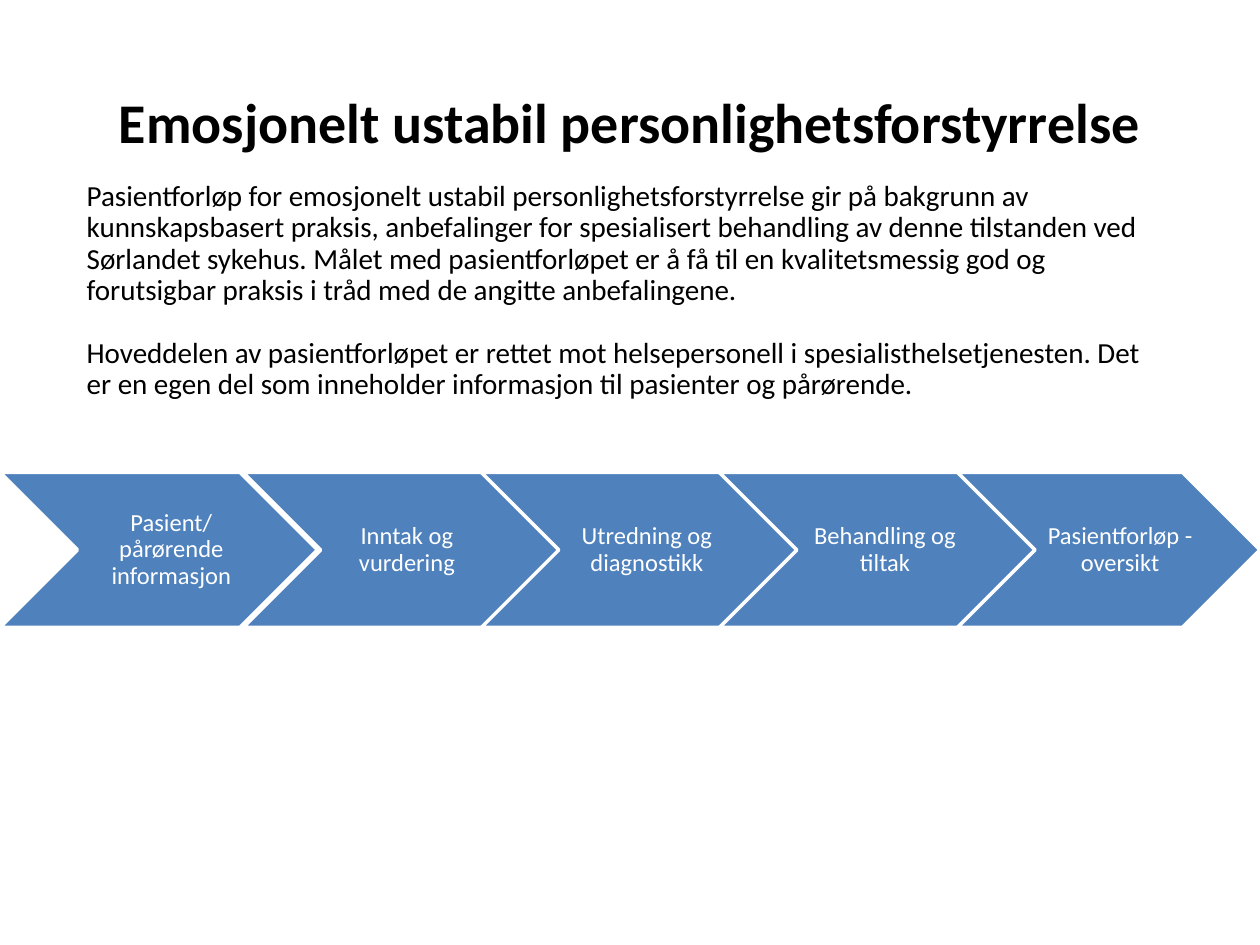
"""Build a slide introducing a patient pathway with its five stages."""
from dataclasses import dataclass

from pptx import Presentation
from pptx import util as u
from pptx.dml.color import RGBColor
from pptx.enum import shapes, text

COLORS = {"ink": "000000", "stage": "4F81BD", "white": "FFFFFF"}
FONT = "Calibri"
STAGE_TOP, STAGE_HEIGHT = 3.75, 1.23
SECOND_LEFT, STEP = 1.93, 1.89


@dataclass
class Stage:
    label: str
    width: float
    label_left: float
    label_width: float


STAGES = [
    Stage("Pasient/ pårørende informasjon", 2.52, 0.67, 1.35),
    Stage("Inntak og vurdering", 2.6, 2.46, 1.51),
    Stage("Utredning og diagnostikk", 2.52, 4.45, 1.34),
    Stage("Behandling og tiltak", 2.6, 6.23, 1.56),
    Stage("Pasientforløp - oversikt", 2.4, 8.23, 1.29),
]

INTRO = [
    "Pasientforløp for emosjonelt ustabil personlighetsforstyrrelse gir på bakgrunn av "
    "kunnskapsbasert praksis, anbefalinger for spesialisert behandling av denne tilstanden ved "
    "Sørlandet sykehus. Målet med pasientforløpet er å få til en kvalitetsmessig god og "
    "forutsigbar praksis i tråd med de angitte anbefalingene.",
    "Hoveddelen av pasientforløpet er rettet mot helsepersonell i spesialisthelsetjenesten. Det "
    "er en egen del som inneholder informasjon til pasienter og pårørende.",
]


def add_text(parent, box: tuple, paragraphs: list[str], size: float, color: str = "ink",
             bold: bool = False, centered: bool = True, spacing: float = 0.9, gap: float = 0):
    """Add a wrapped text box and return its text frame."""
    tf = parent.add_textbox(*map(u.Inches, box)).text_frame
    tf.word_wrap = True
    tf.vertical_anchor = text.MSO_ANCHOR.MIDDLE if centered else text.MSO_ANCHOR.TOP
    for i, content in enumerate(paragraphs):
        p = tf.paragraphs[0] if i == 0 else tf.add_paragraph()
        p.alignment = text.PP_ALIGN.CENTER if centered else text.PP_ALIGN.LEFT
        p.line_spacing = spacing
        if i:
            p.space_before = u.Pt(gap)
        r = p.add_run()
        r.text = content
        r.font.name, r.font.size, r.font.bold = FONT, u.Pt(size), bold
        r.font.color.rgb = RGBColor.from_string(COLORS[color])
    return tf


def add_stage(s, stage: Stage, left: float) -> None:
    """Draw one chevron grouped with its label."""
    group = s.shapes.add_group_shape().shapes
    box = (left, STAGE_TOP, stage.width, STAGE_HEIGHT)
    sp = group.add_shape(shapes.MSO_SHAPE.CHEVRON, *map(u.Inches, box))
    sp.adjustments[0] = 0.5
    sp.shadow.inherit = False
    sp.fill.solid()
    sp.fill.fore_color.rgb = RGBColor.from_string(COLORS["stage"])
    sp.line.color.rgb = RGBColor.from_string(COLORS["white"])
    sp.line.width = u.Pt(2)
    label_box = (stage.label_left, STAGE_TOP, stage.label_width, STAGE_HEIGHT)
    tf = add_text(group, label_box, [stage.label], 14, "white")
    tf.margin_left = u.Inches(0.05)
    tf.margin_right = tf.margin_top = tf.margin_bottom = u.Inches(0.02)


def main() -> None:
    """Build and save the slide."""
    prs = Presentation()
    prs.slide_width, prs.slide_height = u.Inches(10), u.Inches(7.5)
    s = prs.slides.add_slide(prs.slide_layouts[6])
    add_text(s.shapes, (0.75, 0.21, 8.5, 1.5), ["Emosjonelt ustabil personlighetsforstyrrelse"],
             32, bold=True, spacing=1.0)
    for i, stage in enumerate(STAGES):
        add_stage(s, stage, SECOND_LEFT + (i - 1) * STEP if i else 0)
    add_text(s.shapes, (0.59, 1.39, 8.74, 2.05), INTRO, 16.6, centered=False, gap=18)
    prs.save("out.pptx")


if __name__ == "__main__":
    main()
